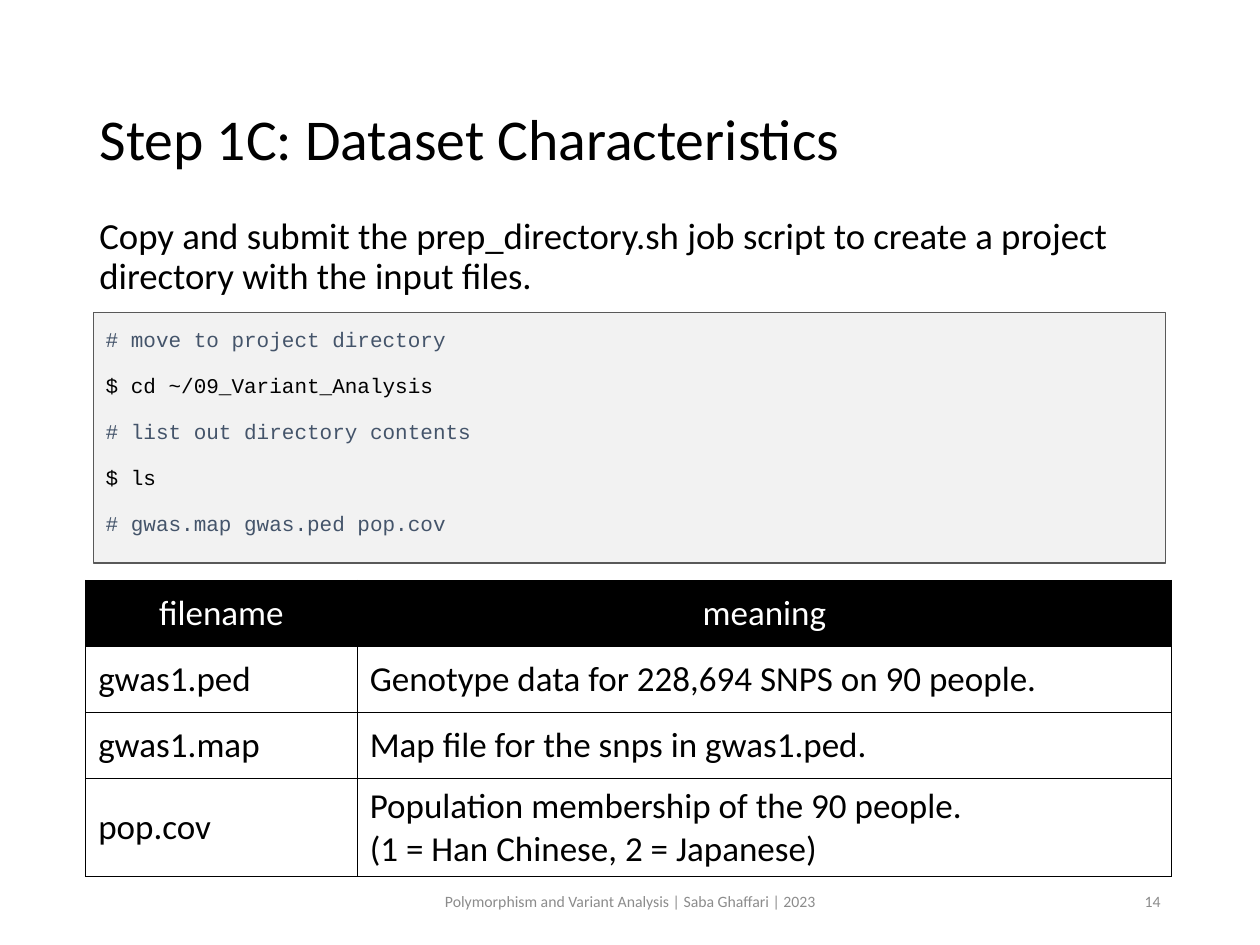
from lxml import etree
from pptx import Presentation
from pptx.dml.color import RGBColor
from pptx.enum.shapes import MSO_SHAPE
from pptx.enum.text import MSO_ANCHOR, PP_ALIGN
from pptx.oxml.ns import qn
from pptx.util import Inches, Pt

LEFT, CENTER, RIGHT = PP_ALIGN.LEFT, PP_ALIGN.CENTER, PP_ALIGN.RIGHT
TOP, MIDDLE = MSO_ANCHOR.TOP, MSO_ANCHOR.MIDDLE
RECTANGLE = MSO_SHAPE.RECTANGLE
TITLE_ONLY = 5

COLORS = {
    "ink": "000000",
    "paper": "FFFFFF",
    "muted": "8C8C8C",
    "code_fill": "F2F2F2",
    "code_line": "595959",
    "comment": "44546A",
}

CODE = [
    "# move to project directory",
    "$ cd ~/09_Variant_Analysis",
    "# list out directory contents",
    "$ ls",
    "# gwas.map gwas.ped pop.cov",
]
FILES = [
    ["filename", "meaning"],
    ["gwas1.ped", "Genotype data for 228,694 SNPS on 90 people."],
    ["gwas1.map", "Map file for the snps in gwas1.ped."],
    ["pop.cov", "Population membership of the 90 people.\n(1 = Han Chinese, 2 = Japanese)"],
]


def rgb(name):
    return RGBColor.from_string(COLORS[name])


def write(frame, text, size=20, font="Calibri", color="ink", align=LEFT,
          spacing=1.0, before=0, comment=None):
    for index, line in enumerate(text.split("\n")):
        para = frame.add_paragraph() if index else frame.paragraphs[0]
        para.alignment = align
        para.line_spacing = spacing
        para.space_before = Pt(before)
        span = para.add_run()
        span.text = line
        span.font.name = font
        span.font.size = Pt(size)
        is_comment = comment and line.startswith("#")
        span.font.color.rgb = rgb(comment if is_comment else color)


class SlideBuilder:
    def __init__(self, deck):
        self.deck = deck
        self.page = deck.slides.add_slide(deck.slide_layouts[TITLE_ONLY])

    def area(self, left, top, width, height):
        across, down = self.deck.slide_width, self.deck.slide_height
        return [int(share * length) for share, length in
                zip((left, top, width, height), (across, down, across, down))]

    def title(self, text, area, **style):
        box = self.page.shapes.title
        box.left, box.top, box.width, box.height = self.area(*area)
        box.text_frame.vertical_anchor = MIDDLE
        write(box.text_frame, text, **style)

    def text(self, text, area, anchor=MIDDLE, **style):
        box = self.page.shapes.add_textbox(*self.area(*area))
        box.text_frame.word_wrap = True
        box.text_frame.vertical_anchor = anchor
        write(box.text_frame, text, **style)

    def code(self, lines, area):
        box = self.page.shapes.add_shape(RECTANGLE, *self.area(*area))
        box.shadow.inherit = False
        box.fill.solid()
        box.fill.fore_color.rgb = rgb("code_fill")
        box.line.color.rgb = rgb("code_line")
        box.line.width = Pt(0.75)
        box.text_frame.word_wrap = True
        box.text_frame.vertical_anchor = TOP
        write(box.text_frame, "\n".join(lines), size=12, font="Courier New",
              spacing=1.3, before=7.5, comment="comment")

    def table(self, rows, area, columns, heights):
        left, top, width, height = self.area(*area)
        grid = self.page.shapes.add_table(
            len(rows), len(columns), left, top, width, height).table
        for column, share in zip(grid.columns, columns):
            column.width = int(width * share)
        for row, share in zip(grid.rows, heights):
            row.height = int(height * share)
        for row_index, row in enumerate(rows):
            header = row_index == 0
            for column_index, text in enumerate(row):
                cell = grid.cell(row_index, column_index)
                cell.vertical_anchor = MIDDLE
                cell.fill.solid()
                cell.fill.fore_color.rgb = rgb("ink" if header else "paper")
                write(cell.text_frame, text, color="paper" if header else "ink",
                      align=CENTER if header else LEFT)
                self.borders(cell)

    def borders(self, cell, width=0.5):
        properties = cell._tc.get_or_add_tcPr()
        for index, side in enumerate(("a:lnL", "a:lnR", "a:lnT", "a:lnB")):
            line = etree.Element(qn(side), w=str(Pt(width)))
            fill = etree.SubElement(line, qn("a:solidFill"))
            etree.SubElement(fill, qn("a:srgbClr"), val=COLORS["ink"])
            properties.insert(index, line)


def main():
    deck = Presentation()
    deck.slide_width, deck.slide_height = Inches(10), Inches(7.5)
    slide = SlideBuilder(deck)
    margin, content = 0.069, 0.862
    footer_top, footer_height = 0.927, 0.053

    slide.title("Step 1C: Dataset Characteristics",
                (margin, 0.053, content, 0.193), size=33, spacing=0.9)
    slide.text("Copy and submit the prep_directory.sh job script to create "
               "a project directory with the input files.",
               (margin, 0.224, content, 0.635), anchor=TOP,
               size=21, spacing=0.9, before=7.5)
    slide.text("Polymorphism and Variant Analysis | Saba Ghaffari | 2023",
               (0.331, footer_top, 0.338, footer_height),
               size=9, color="muted", align=CENTER)
    slide.text("14", (0.706, footer_top, 0.225, footer_height),
               size=9, color="muted", align=RIGHT)
    slide.code(CODE, (0.074, 0.331, 0.851, 0.265))
    slide.table(FILES, (0.068, 0.614, content, 0.314),
                columns=(0.25, 0.75), heights=(0.223, 0.223, 0.223, 0.331))
    deck.save("out.pptx")


if __name__ == "__main__":
    main()
